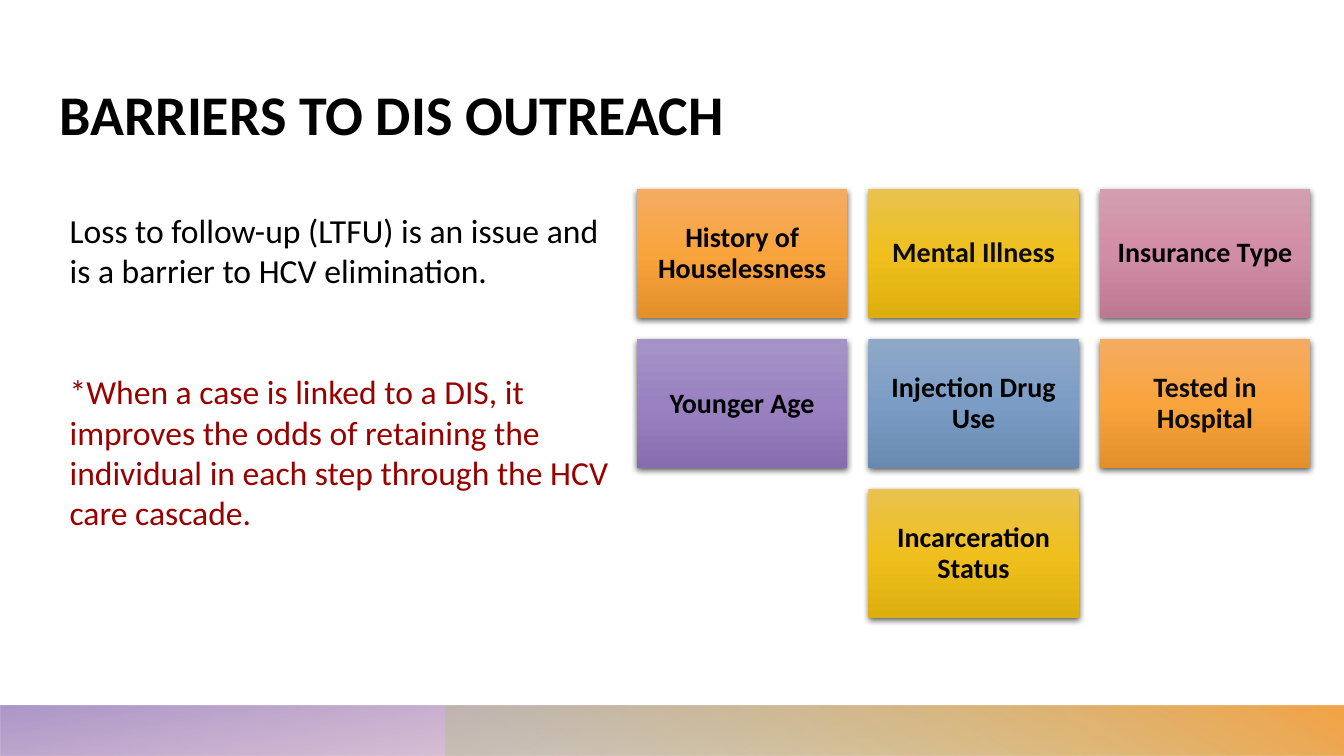
from lxml.etree import SubElement
from pptx import Presentation
from pptx.dml.color import RGBColor
from pptx.enum.shapes import MSO_SHAPE
from pptx.enum.text import MSO_ANCHOR, MSO_AUTO_SIZE, PP_ALIGN
from pptx.oxml.ns import qn
from pptx.util import Pt


def add_run(paragraph, text, size, color, bold=False):
    run = paragraph.add_run()
    run.text = text
    run.font.name = "Calibri"
    run.font.size = Pt(size)
    run.font.bold = bold
    run.font.color.rgb = RGBColor.from_string(color)


def add_gradient_box(left, top, width, height, stops, angle):
    """Rectangle without outline; stops are (position %, colour, opacity %)."""
    box = slide.shapes.add_shape(MSO_SHAPE.RECTANGLE, Pt(left), Pt(top), Pt(width), Pt(height))
    box.shadow.inherit = False
    box.line.fill.background()
    box.fill.gradient()
    gradient = box._element.spPr.find(qn("a:gradFill"))
    for child in list(gradient):
        gradient.remove(child)
    stop_list = SubElement(gradient, qn("a:gsLst"))
    for position, color, opacity in stops:
        stop = SubElement(stop_list, qn("a:gs"), pos=str(position * 1000))
        rgb = SubElement(stop, qn("a:srgbClr"), val=color)
        if opacity < 100:
            SubElement(rgb, qn("a:alpha"), val=str(opacity * 1000))
    SubElement(gradient, qn("a:lin"), ang=str(angle * 60000), scaled="0")
    return box


presentation = Presentation()
presentation.slide_width = Pt(960)
presentation.slide_height = Pt(540)
slide = presentation.slides.add_slide(presentation.slide_layouts[1])

# Title
title = slide.shapes.title
title.left, title.top, title.width, title.height = Pt(42.5), Pt(21), Pt(793), Pt(84)
heading = title.text_frame
heading.margin_left = heading.margin_right = heading.margin_top = heading.margin_bottom = 0
heading.vertical_anchor = MSO_ANCHOR.BOTTOM
heading.auto_size = MSO_AUTO_SIZE.NONE
heading.paragraphs[0].alignment = PP_ALIGN.LEFT
add_run(heading.paragraphs[0], "BARRIERS TO DIS OUTREACH", 40, "000000", True)

# Footer band
purple_band = add_gradient_box(
    0, 504, 960, 36, [(0, "D092A7", 28), (14, "D092A7", 28), (100, "9C85C0", 85)], 100)
purple_band.rotation = 180
orange_band = add_gradient_box(
    318, 504, 642, 36,
    [(0, "AFBD7B", 35), (9, "AFBD7B", 35), (99, "F3A447", 100), (100, "F3A447", 100)], 240)
for band in (purple_band, orange_band):
    band._element.spPr.xfrm.set("flipH", "1")

# Barrier cards: three columns, gaps of equal size
ORANGE = ("F5AC61", "F9A33D", "E3902B")
YELLOW = ("E9C24F", "EFC01D", "DDAF0E")
PINK = ("D49EB0", "D28DA6", "BC7991")
PURPLE = ("A693C6", "9A82C2", "876DAF")
BLUE = ("8EA8C8", "7B9DC5", "698AB0")
barriers = [
    ("History of Houselessness", 0, 0, ORANGE, "000000"),
    ("Mental Illness", 1, 0, YELLOW, "0C0C0C"),
    ("Insurance Type", 2, 0, PINK, "000000"),
    ("Younger Age", 0, 1, PURPLE, "000000"),
    ("Injection Drug Use", 1, 1, BLUE, "000000"),
    ("Tested in Hospital", 2, 1, ORANGE, "0C0C0C"),
    ("Incarceration Status", 1, 2, YELLOW, "000000"),
]
card_width, card_height, gap = 150.3, 92.2, 15
for barrier, column, row, shades, text_color in barriers:
    card = add_gradient_box(
        455 + column * (card_width + gap), 135.2 + row * (card_height + gap),
        card_width, card_height,
        [(position, shade, 100) for position, shade in zip((0, 50, 100), shades)], 90)
    effects = card._element.spPr.find(qn("a:effectLst"))
    shadow = SubElement(effects, qn("a:outerShdw"), blurRad=str(Pt(4.5)), dist=str(Pt(1.5)),
                        dir="5400000", algn="ctr", rotWithShape="0")
    shadow_color = SubElement(shadow, qn("a:srgbClr"), val="000000")
    SubElement(shadow_color, qn("a:alpha"), val="63000")
    label = card.text_frame
    label.word_wrap = True
    label.vertical_anchor = MSO_ANCHOR.MIDDLE
    label.margin_left = label.margin_right = label.margin_top = label.margin_bottom = Pt(6)
    label.paragraphs[0].alignment = PP_ALIGN.CENTER
    label.paragraphs[0].line_spacing = 0.9
    add_run(label.paragraphs[0], barrier, 20, text_color, True)

# Message on follow-up
message = slide.placeholders[1]
message.left, message.top, message.width, message.height = Pt(42.5), Pt(146), Pt(412.5), Pt(284)
body = message.text_frame
body.auto_size = MSO_AUTO_SIZE.NONE
statements = [
    ("Loss to follow-up (LTFU) is an issue and is a barrier to HCV elimination.", "000000", 0),
    ("*When a case is linked to a DIS, it improves the odds of retaining the individual "
     "in each step through the HCV care cascade.", "990000", 58),
]
for index, (statement, color, space_before) in enumerate(statements):
    paragraph = body.paragraphs[0] if index == 0 else body.add_paragraph()
    paragraph.space_before = Pt(space_before)
    properties = paragraph._p.get_or_add_pPr()
    properties.set("marL", "0")
    properties.set("indent", "0")
    SubElement(properties, qn("a:buNone"))
    add_run(paragraph, statement, 24, color)

presentation.save("out.pptx")
